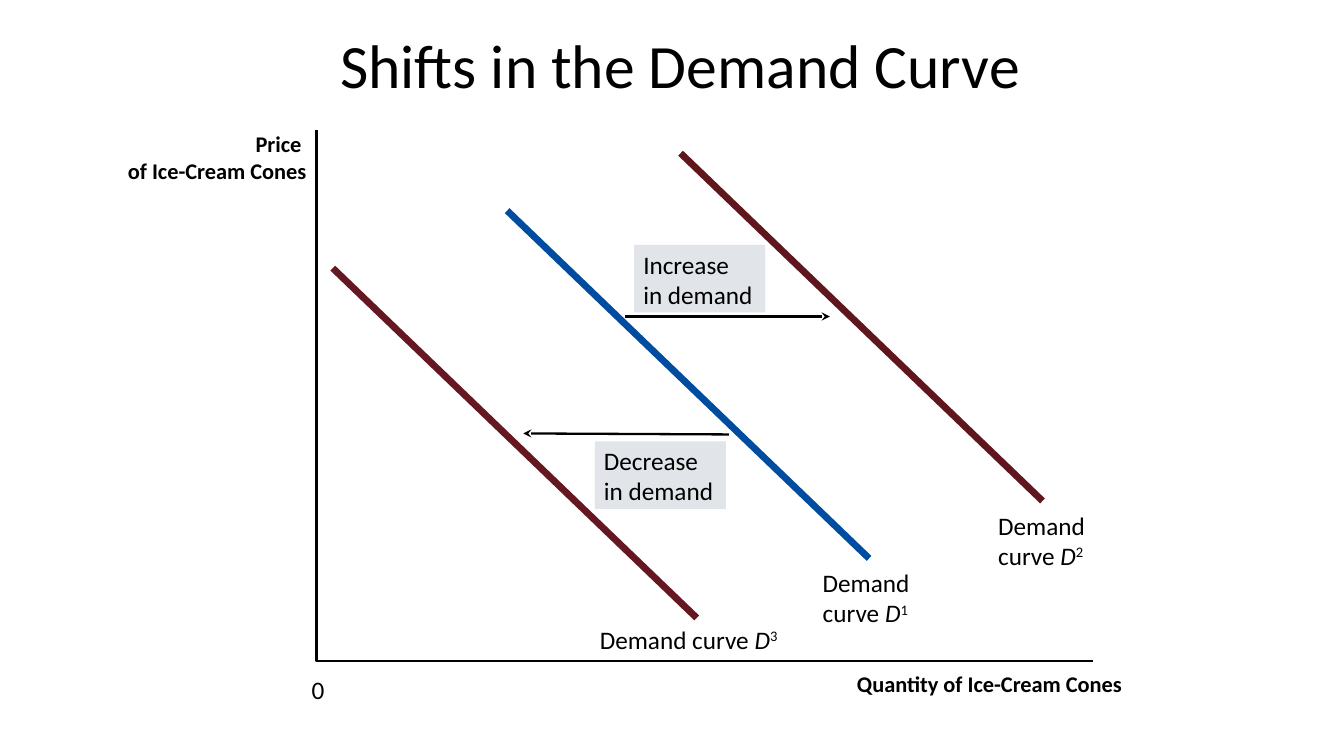
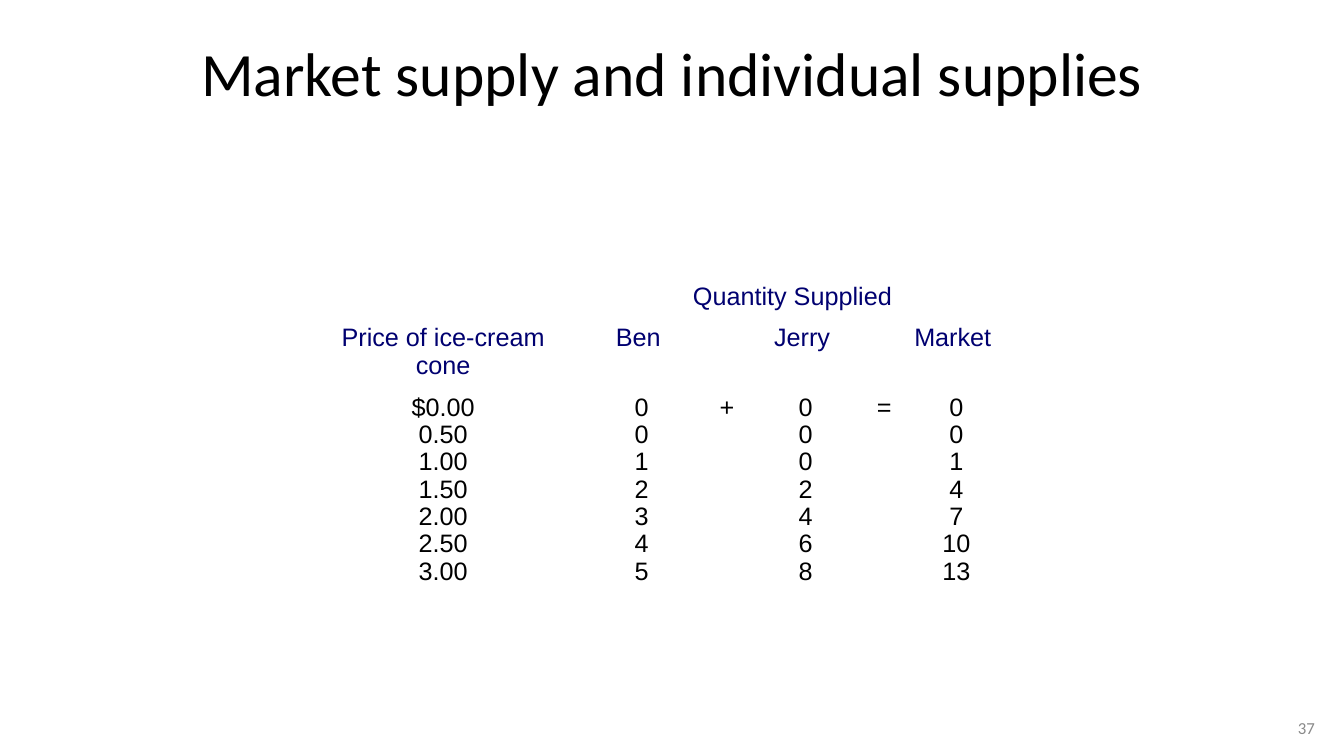
from pptx import Presentation
from pptx.dml.color import RGBColor
from pptx.enum.shapes import MSO_CONNECTOR as Conn, MSO_SHAPE as Shape
from pptx.enum.text import MSO_ANCHOR as Anchor, PP_ALIGN as Align
from pptx.oxml import parse_xml
from pptx.oxml.ns import nsdecls
from pptx.util import Inches, Pt

BLACK, NAVY, GREY = "000000", "000070", "898989"
BLUE, RED, DARK, PALE = "004C9F", "5F161D", "651821", "E1E5E9"
hue = RGBColor.from_string


def xml(text):
    """Make an element in the drawing namespace."""
    tag, rest = text.split(">", 1)
    return parse_xml(f"{tag} {nsdecls('a')}>{rest}")


def write(frame, lines, size=18, name="Calibri", color=BLACK, bold=False,
          align=Align.LEFT, space=None, pad=(0, 0), wrap=False, top=Anchor.TOP):
    """Fill a text frame, one paragraph for each line."""
    frame.word_wrap, frame.vertical_anchor = wrap, top
    frame.margin_left = frame.margin_right = Inches(pad[0])
    frame.margin_top = frame.margin_bottom = Inches(pad[1])
    for i, line in enumerate(lines):
        par = frame.add_paragraph() if i else frame.paragraphs[0]
        par.text, par.alignment = line, align
        if space:
            par.line_spacing = space
        font = par.font
        font.name, font.size, font.bold = name, Pt(size), bold
        font.color.rgb = hue(color)


deck = Presentation()
deck.slide_width, deck.slide_height = Inches(13.33), Inches(7.5)
pad = (0.1, 0.05)

# Slides and their titles
slides = []
for words, spot, top, space in [
    ("Shifts in the Demand Curve", (2.33, 0.25, 8.84, 0.91), Anchor.MIDDLE, 0.8),
    ("Market supply and individual supplies", (0.67, 0.3, 12, 1.25), Anchor.TOP, None),
]:
    slide = deck.slides.add_slide(deck.slide_layouts[6])
    box = slide.shapes.add_textbox(*map(Inches, spot))
    write(box.text_frame, [words], 44, align=Align.CENTER, space=space,
          pad=pad, wrap=True, top=top)
    slides.append(slide)
graph, sheet = (slide.shapes for slide in slides)

# Axes
pen = graph.build_freeform(Inches(3.14), Inches(1.29))
pen.add_line_segments([(Inches(3.14), Inches(6.56)), (Inches(10.84), Inches(6.56))], close=False)
axes = pen.convert_to_shape()
axes.shadow.inherit = False
axes.fill.background()
axes.line.color.rgb, axes.line.width = hue(BLACK), Pt(1.63)

# Demand curves and the arrows between them
for ends, color, width in [
    ((8.62, 5.54, 5.03, 2.09), BLUE, 4.88),
    ((10.34, 4.97, 6.75, 1.52), RED, 4.88),
    ((6.91, 6.13, 3.3, 2.66), DARK, 4.88),
    ((6.2, 3.14, 8.23, 3.14), BLACK, 1.63),
    ((7.23, 4.31, 5.19, 4.3), BLACK, 1.63),
]:
    line = graph.add_connector(Conn.STRAIGHT, *map(Inches, ends))
    line.line.color.rgb, line.line.width = hue(color), Pt(width)
    if color == BLACK:
        line.line._get_or_add_ln().append(xml('<a:tailEnd type="stealth"></a:tailEnd>'))
    line._element.spPr.append(xml("<a:effectLst></a:effectLst>"))

# Axis labels
for lines, spot, size, align in [
    (["Price ", "of Ice-Cream Cones"], (1.25, 1.29, 1.79, 0.54), 16, Align.RIGHT),
    (["Quantity of Ice-Cream Cones"], (8.5, 6.65, 2.67, 0.27), 16, Align.LEFT),
    (["0"], (3.09, 6.69, 0.13, 0.4), 18, Align.LEFT),
]:
    box = graph.add_textbox(*map(Inches, spot))
    write(box.text_frame, lines, size, bold=size == 16, align=align)

# Arrow labels
for word, left, top in [("Increase", 6.29, 2.43), ("Decrease", 5.9, 4.38)]:
    box = graph.add_shape(Shape.RECTANGLE, *map(Inches, (left, top, 1.3, 0.67)))
    box.shadow.inherit = False
    box.fill.solid()
    box.fill.fore_color.rgb = hue(PALE)
    box.line.fill.background()
    write(box.text_frame, [word, "in demand"], pad=(0.09, 0.04))

# Curve labels
for words, digit, spot in [
    ("Demand \vcurve ", "1", (8.16, 5.63, 0.93, 0.61)),
    ("Demand \vcurve ", "2", (9.9, 5.06, 0.93, 0.61)),
    ("Demand curve ", "3", (5.95, 6.19, 1.8, 0.3)),
]:
    box = graph.add_textbox(*map(Inches, spot))
    write(box.text_frame, [words])
    par = box.text_frame.paragraphs[0]
    run = par.add_run()
    run.text, run.font.italic = "D", True
    run = par.add_run()
    run.text = digit
    run._r.get_or_add_rPr().set("baseline", "30000")

# Supply table
heads = ["Price of ice-cream cone", "Ben ", "", "Jerry ", "", "Market "]
body = [
    ["$0.00", "0.50", "1.00", "1.50", "2.00", "2.50", "3.00"],
    ["0", "0", "1", "2", "3", "4", "5"],
    ["+"],
    ["0", "0", "0", "2", "4", "6", "8"],
    ["="],
    ["0", "0", "1", "4", "7", "10", "13"],
]
rows = [["", "Quantity Supplied", "", "", "", ""], heads, body]
table = sheet.add_table(3, 6, *map(Inches, (3.08, 2.75, 6.93, 3.02))).table
table.first_row = table.horz_banding = False
for col, width in zip(table.columns, [2.63, 1.31, 0.38, 1.18, 0.38, 1.05]):
    col.width = Inches(width)
for row, height in zip(table.rows, [0.41, 0.41, 2.2]):
    row.height = Inches(height)
table.cell(0, 1).merge(table.cell(0, 5))
for r, row in enumerate(rows):
    for c, item in enumerate(row):
        cell = table.cell(r, c)
        cell.fill.background()
        last = r == 2
        write(cell.text_frame, item if last else [item], name="Arial", align=Align.CENTER,
              color=BLACK if last else NAVY, space=0.97 if last else None,
              pad=pad, wrap=True)
        if not last:
            cell._tc.get_or_add_tcPr().insert(0, xml(
                f'<a:lnB w="{Pt(1)}"><a:solidFill><a:srgbClr val="{BLACK}"/></a:solidFill></a:lnB>'))

# Page number
box = sheet.add_textbox(*map(Inches, (12.25, 7.02, 0.89, 0.4)))
write(box.text_frame, ["37"], 12, color=GREY, align=Align.RIGHT, pad=pad, wrap=True,
      top=Anchor.MIDDLE)

deck.save("out.pptx")
